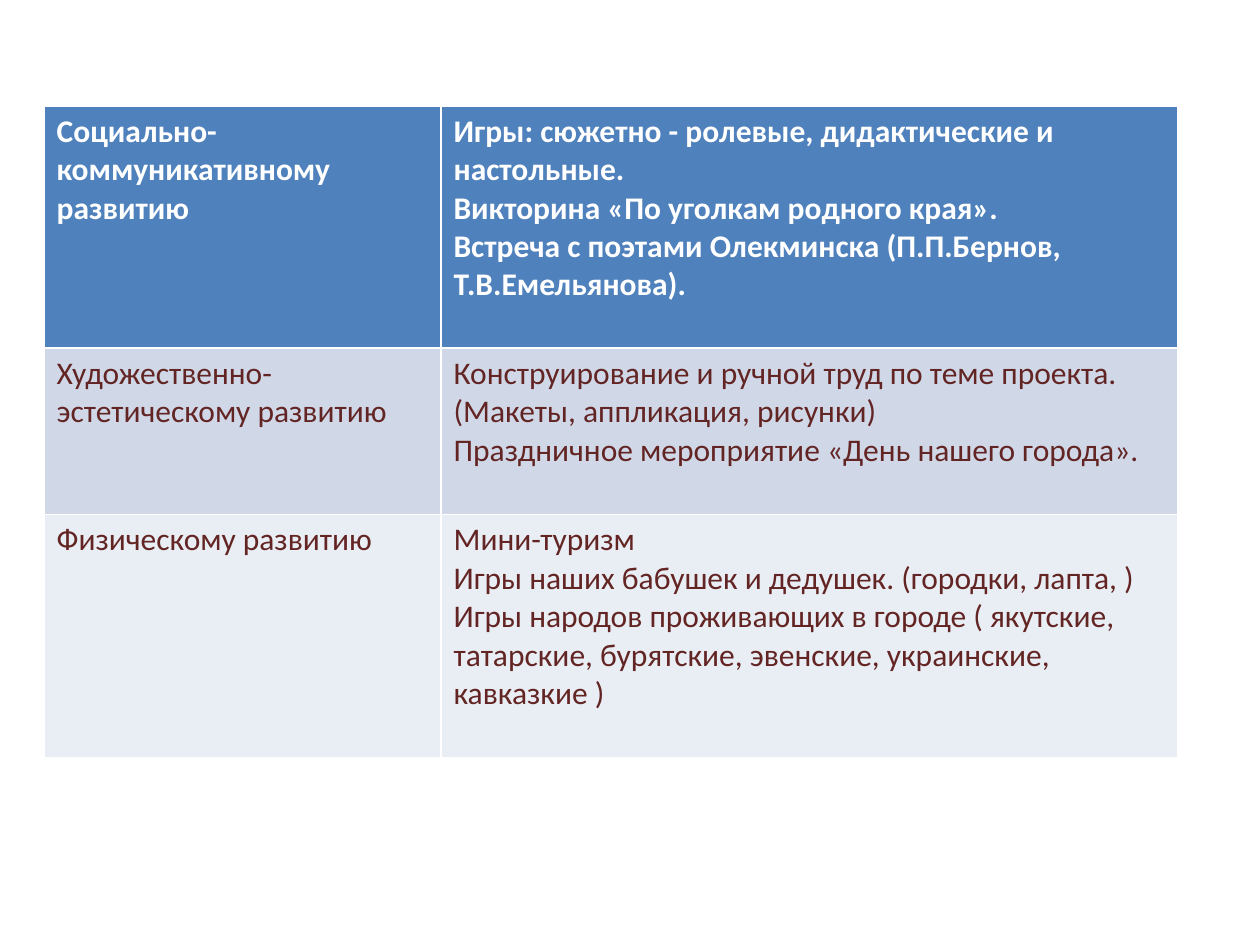
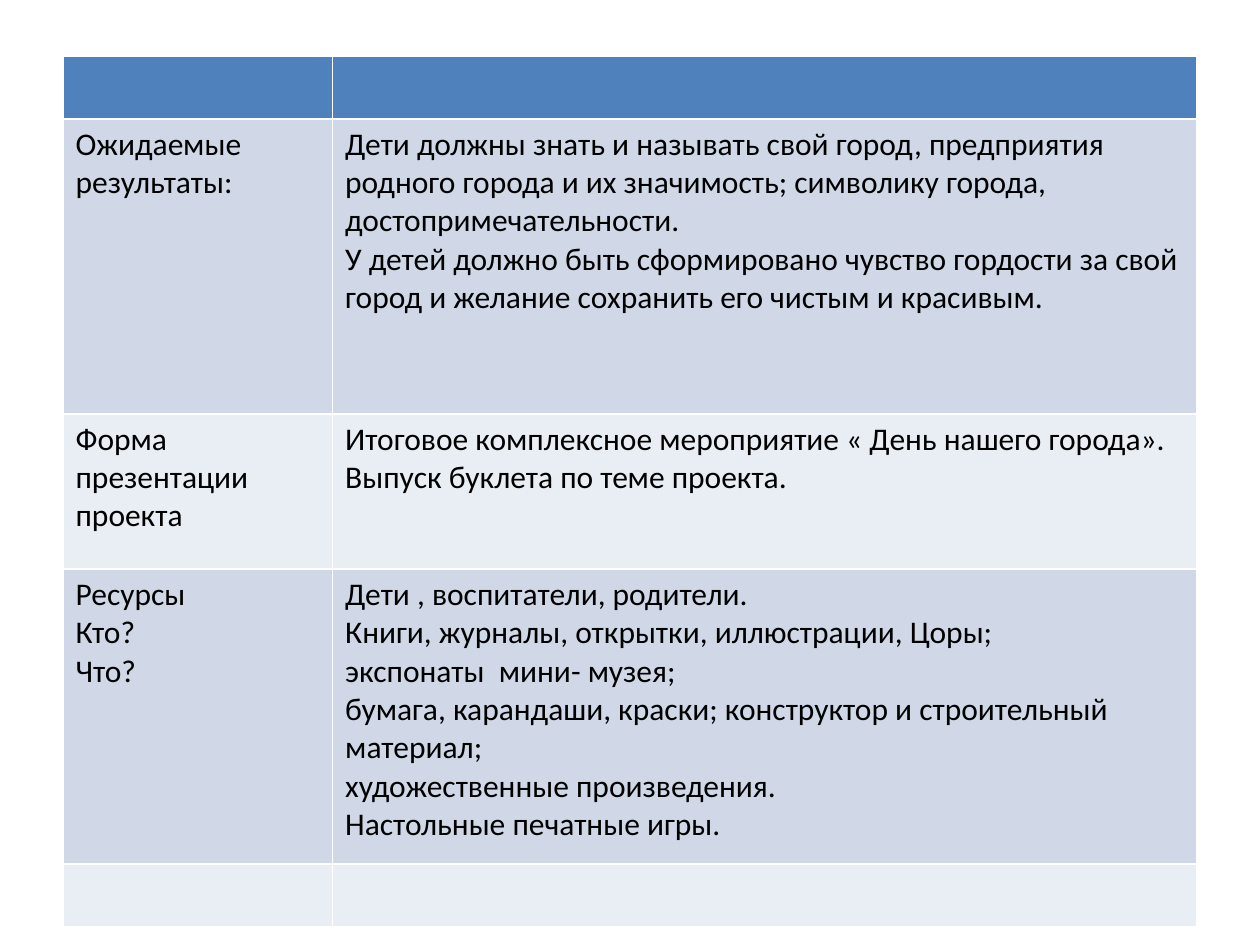
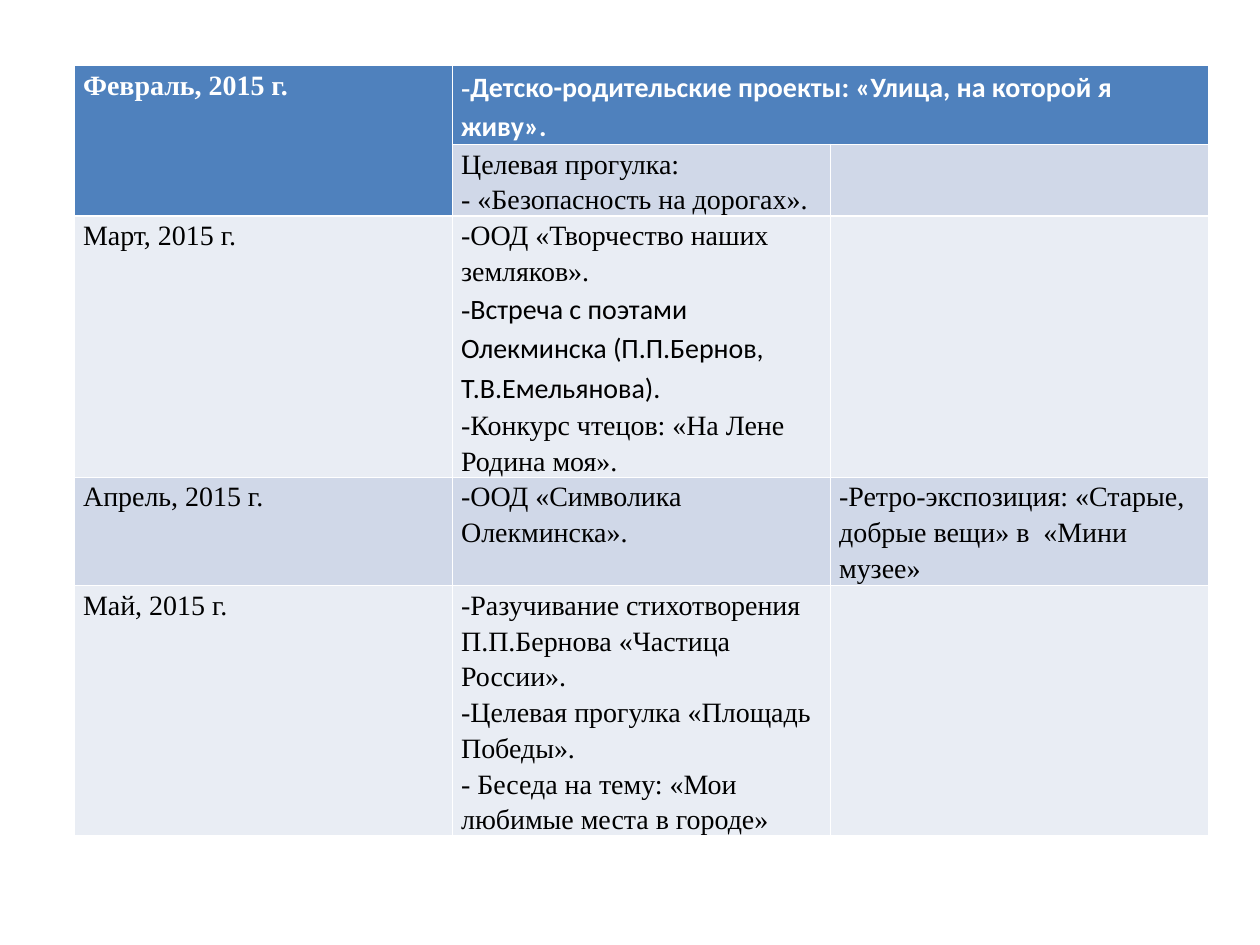
from pptx import Presentation
from pptx.dml.color import RGBColor
from pptx.util import Inches, Pt

SLIDE_WIDTH, SLIDE_HEIGHT = Inches(10), Inches(7.5)
HEADER_FILL = RGBColor(0x4F, 0x81, 0xBD)
BAND_FILLS = (RGBColor(0xE9, 0xED, 0xF4), RGBColor(0xD0, 0xD8, 0xE8))
WHITE = RGBColor(0xFF, 0xFF, 0xFF)
BLACK = RGBColor(0, 0, 0)
MAROON = RGBColor(0x63, 0x25, 0x23)
SANS, SERIF = "Calibri", "Times New Roman"

DEVELOPMENT_ROWS = [
    [["Социально-коммуникативному развитию"],
     ["Игры: сюжетно - ролевые, дидактические и настольные.",
      "Викторина «По уголкам родного края».",
      "Встреча с поэтами Олекминска (П.П.Бернов, Т.В.Емельянова)."]],
    [["Художественно-эстетическому развитию"],
     ["Конструирование и ручной труд по теме проекта. (Макеты, аппликация, рисунки)",
      "Праздничное мероприятие «День нашего города»."]],
    [["Физическому развитию"],
     ["Мини-туризм",
      "Игры наших бабушек и дедушек. (городки, лапта, )",
      "Игры народов проживающих в городе ( якутские, татарские, бурятские, "
      "эвенские, украинские, кавказкие )"]],
]

RESULT_ROWS = [
    [[], []],
    [["Ожидаемые результаты:"],
     ["Дети должны знать и называть свой город, предприятия родного города и их "
      "значимость; символику города, достопримечательности.",
      "У детей должно быть сформировано чувство гордости за свой город и желание "
      "сохранить его чистым и красивым."]],
    [["Форма", "презентации  проекта"],
     ["Итоговое комплексное мероприятие « День нашего города».",
      "Выпуск буклета по теме проекта."]],
    [["Ресурсы", "Кто?", "Что?"],
     ["Дети , воспитатели, родители.",
      "Книги, журналы, открытки, иллюстрации, Цоры;",
      "экспонаты  мини- музея;",
      "бумага, карандаши, краски; конструктор и строительный материал;",
      "художественные произведения.",
      "Настольные печатные игры."]],
    [[], []],
]

SCHEDULE_ROWS = [
    [["Февраль, 2015 г."],
     [("-", "Детско-родительские проекты: «Улица, на которой я живу».")], []],
    [[], ["Целевая прогулка:", "- «Безопасность на дорогах»."], []],
    [["Март, 2015 г."],
     ["-ООД «Творчество наших земляков».",
      ("-", "Встреча с поэтами Олекминска (П.П.Бернов, Т.В.Емельянова)."),
      "-Конкурс чтецов: «На Лене Родина моя»."], []],
    [["Апрель, 2015 г."],
     ["-ООД «Символика Олекминска»."],
     ["-Ретро-экспозиция: «Старые, добрые вещи» в  «Мини музее»"]],
    [["Май, 2015 г."],
     ["-Разучивание стихотворения П.П.Бернова «Частица России».",
      "-Целевая прогулка «Площадь Победы».",
      "- Беседа на тему: «Мои любимые места в городе»"], []],
]


def write_text(text_frame, paragraphs, *, font, size, color, bold, line_spacing):
    """Write paragraphs; in a (marker, body) pair the body is set in SANS."""
    for index, content in enumerate(paragraphs):
        paragraph = text_frame.add_paragraph() if index else text_frame.paragraphs[0]
        paragraph.line_spacing = line_spacing
        parts = (content,) if isinstance(content, str) else content
        for part, name in zip(parts, (font, SANS)):
            run = paragraph.add_run()
            run.text = part
            run.font.name = name
            run.font.size = Pt(size)
            run.font.bold = bold
            run.font.color.rgb = color


def share_out(total, weights):
    """Split a length in proportion to the weights."""
    return [int(total * weight / sum(weights)) for weight in weights]


def add_table_slide(presentation, rows, *, box, columns, heights, merges=(), margins=None,
                    font=SANS, size=18, color=BLACK, line_spacing=None):
    """Add a slide with a banded table in a box given in percent of the slide."""
    slide = presentation.slides.add_slide(presentation.slide_layouts[6])
    left, top, width, height = (
        int(length * share / 100)
        for length, share in zip((SLIDE_WIDTH, SLIDE_HEIGHT) * 2, box))
    table = slide.shapes.add_table(len(rows), len(columns), left, top, width, height).table
    for column, column_width in zip(table.columns, share_out(width, columns)):
        column.width = column_width
    for row, row_height in zip(table.rows, share_out(height, heights)):
        row.height = row_height
    for first, last in merges:
        table.cell(*first).merge(table.cell(*last))
    for row_index, row in enumerate(rows):
        header = row_index == 0
        for column_index, paragraphs in enumerate(row):
            cell = table.cell(row_index, column_index)
            cell.fill.solid()
            cell.fill.fore_color.rgb = HEADER_FILL if header else BAND_FILLS[row_index % 2]
            if margins and paragraphs:
                cell.margin_left = cell.margin_right = Inches(margins[0])
                cell.margin_top = cell.margin_bottom = Inches(margins[1])
            write_text(cell.text_frame, paragraphs, font=font, size=size, bold=header,
                       color=WHITE if header else color, line_spacing=line_spacing)


def main():
    """Build the three table slides and save them."""
    presentation = Presentation()
    presentation.slide_width, presentation.slide_height = SLIDE_WIDTH, SLIDE_HEIGHT
    add_table_slide(presentation, DEVELOPMENT_ROWS, box=(3.5, 11.2, 90, 69),
                    columns=(35, 65), heights=(1.92, 1.32, 1.93), color=MAROON)
    add_table_slide(presentation, RESULT_ROWS, box=(5, 5.9, 90, 92.2),
                    columns=(2.14, 6.86), heights=(0.5, 2.34, 1.23, 2.34, 0.5))
    add_table_slide(presentation, SCHEDULE_ROWS, box=(5.9, 6.95, 90, 81.3),
                    columns=(1, 1, 1), heights=(0.62, 0.57, 2.07, 0.86, 1.98),
                    merges=(((0, 0), (1, 0)), ((0, 1), (0, 2))),
                    margins=(0.07, 0), font=SERIF, size=16, line_spacing=1.15)
    presentation.save("out.pptx")


if __name__ == "__main__":
    main()
